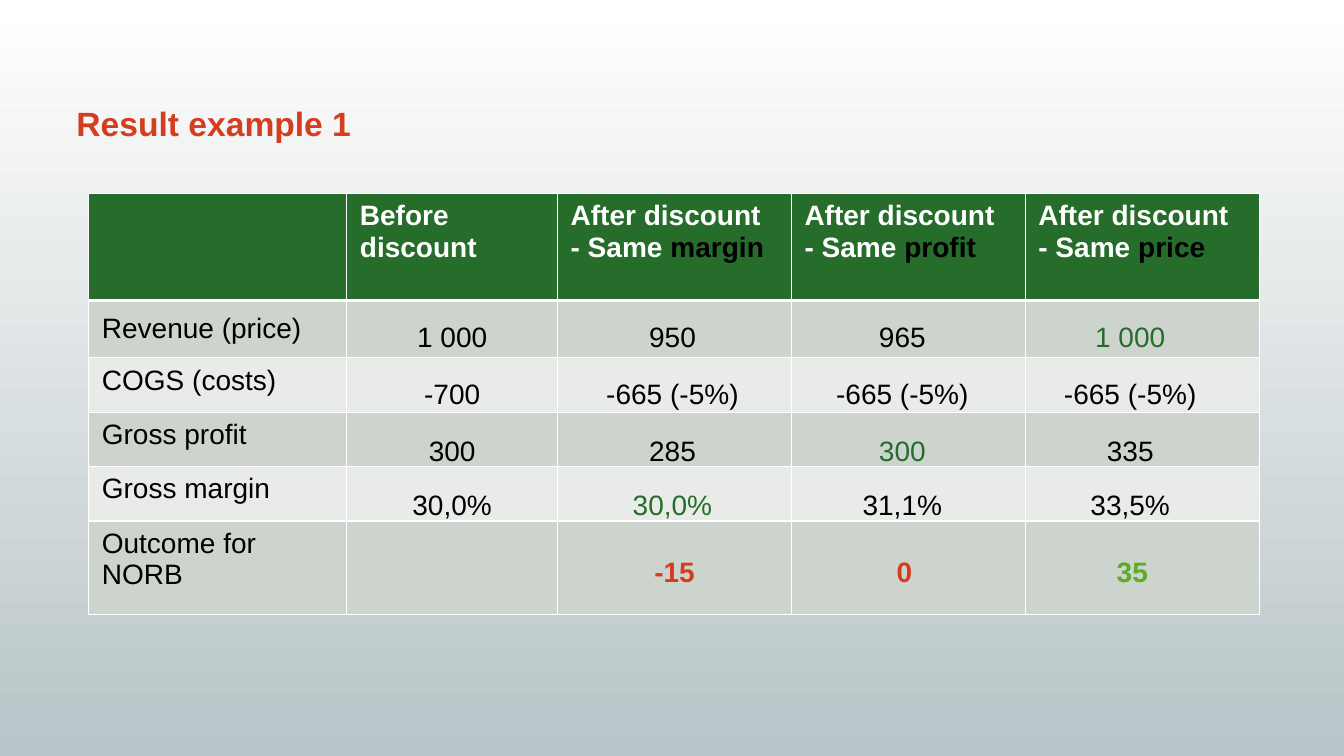
import lxml.etree
import pptx
import pptx.dml.color
import pptx.enum.shapes
import pptx.enum.text
import pptx.oxml.ns
import pptx.util
from dataclasses import dataclass
from pptx.util import Inches

TITLE = "Result example 1"
HEADERS = [
    [],
    [[("Before discount", "white")]],
    [[("After discount", "white")], [("- Same ", "white"), ("margin", "black")]],
    [[("After discount", "white")], [("- Same ", "white"), ("profit", "black")]],
    [[("After discount", "white")], [("- Same ", "white"), ("price", "black")]],
]
ROW_LABELS = ["Revenue (price)", "COGS (costs)", "Gross profit", "Gross margin", "Outcome for NORB"]
SCENARIOS = [
    ["1 000", "-700", "300", "30,0%"],
    ["950", "-665 (-5%)", "285", "30,0%", "-15"],
    ["965", "-665 (-5%)", "300", "31,1%", "0"],
    ["1 000", "-665 (-5%)", "335", "33,5%", "35"],
]
HIGHLIGHTS = {(1, 3): "green", (2, 2): "green", (3, 0): "green",
              (1, 4): "red", (2, 4): "red", (3, 4): "lime"}

COLUMN_WIDTHS = [2.56, 2.09, 2.32, 2.32, 2.32]
ROW_HEIGHTS = [1.06, 0.57, 0.54, 0.54, 0.54, 0.93]
VALUE_COLUMNS = [(3.43, 2.11), (5.53, 2.28), (7.81, 2.28), (10.07, 2.28)]
VALUE_TOPS = [3.12, 3.69, 4.25, 4.79, 5.45]
OUTCOME_ROW = 4
OUTCOME_SHIFT = 0.02


@dataclass
class Theme:
    font = "Arial"
    title_size = 24
    body_size = 20
    white = "FFFFFF"
    black = "000000"
    red = "D53D20"
    green = "266D2B"
    lime = "5BAC26"
    band_dark = "CDD4CD"
    band_light = "E8EBE8"
    backdrop = "B9C5C8"


theme = Theme()


def color(name):
    return pptx.dml.color.RGBColor.from_string(getattr(theme, name))


def style(para, size, bold=False, tint=None):
    para.font.name = theme.font
    para.font.size = pptx.util.Pt(size)
    para.font.bold = bold
    if tint:
        para.font.color.rgb = color(tint)


def add_backdrop(page, deck):
    backdrop = page.shapes.add_shape(pptx.enum.shapes.MSO_SHAPE.RECTANGLE, 0, 0,
                                     deck.slide_width, deck.slide_height)
    backdrop.shadow.inherit = False
    backdrop.line.fill.background()
    backdrop.fill.gradient()
    backdrop.fill.gradient_angle = 90
    for stop, position, name in zip(backdrop.fill.gradient_stops, (0, 1), ("backdrop", "white")):
        stop.position = position
        stop.color.rgb = color(name)


def add_text(page, text, area, size, tint, bold=False, align=None):
    box = page.shapes.add_textbox(*map(Inches, area))
    box.text_frame.word_wrap = True
    para = box.text_frame.paragraphs[0]
    para.text = text
    para.alignment = align
    style(para, size, bold, tint)
    return box


def finish_cell(cell, fill, bottom_width):
    cell.margin_left = cell.margin_right = Inches(0.13)
    cell.margin_top = cell.margin_bottom = Inches(0.07)
    properties = cell._tc.get_or_add_tcPr()
    for side, width in (("L", 1), ("R", 1), ("T", 1), ("B", bottom_width)):
        line = lxml.etree.SubElement(properties, pptx.oxml.ns.qn(f"a:ln{side}"),
                                     w=str(pptx.util.Pt(width)))
        solid = lxml.etree.SubElement(line, pptx.oxml.ns.qn("a:solidFill"))
        lxml.etree.SubElement(solid, pptx.oxml.ns.qn("a:srgbClr"), val=theme.white)
    cell.fill.solid()
    cell.fill.fore_color.rgb = color(fill)


def add_result_table(page):
    area = (0.88, 1.92, sum(COLUMN_WIDTHS), sum(ROW_HEIGHTS))
    table = page.shapes.add_table(len(ROW_HEIGHTS), len(COLUMN_WIDTHS), *map(Inches, area)).table
    table.first_row = table.horz_banding = False
    for column, width in zip(table.columns, COLUMN_WIDTHS):
        column.width = Inches(width)
    for index, (row, height) in enumerate(zip(table.rows, ROW_HEIGHTS)):
        row.height = Inches(height)
        fill = "green" if index == 0 else ("band_light", "band_dark")[index % 2]
        for cell in row.cells:
            finish_cell(cell, fill, 3 if index == 0 else 1)
    for column, lines in enumerate(HEADERS):
        frame = table.cell(0, column).text_frame
        for index, line in enumerate(lines):
            para = frame.add_paragraph() if index else frame.paragraphs[0]
            style(para, theme.body_size, bold=True)
            for text, tint in line:
                span = para.add_run()
                span.text = text
                span.font.color.rgb = color(tint)
    for row, label in enumerate(ROW_LABELS, start=1):
        para = table.cell(row, 0).text_frame.paragraphs[0]
        para.text = label
        style(para, theme.body_size, tint="black")
    table.cell(1, 0).vertical_anchor = pptx.enum.text.MSO_ANCHOR.MIDDLE


def add_values(page):
    for column, ((left, width), values) in enumerate(zip(VALUE_COLUMNS, SCENARIOS)):
        for row, (top, value) in enumerate(zip(VALUE_TOPS, values)):
            outcome = row == OUTCOME_ROW
            area = (left + OUTCOME_SHIFT * outcome, top, width, 0.44)
            add_text(page, value, area, theme.body_size, HIGHLIGHTS.get((column, row), "black"),
                     outcome, pptx.enum.text.PP_ALIGN.CENTER)


def main():
    deck = pptx.Presentation()
    deck.slide_width, deck.slide_height = Inches(13.33), Inches(7.5)
    page = deck.slides.add_slide(deck.slide_layouts[6])
    add_backdrop(page, deck)
    title = add_text(page, TITLE, (0.66, 0.94, 12.02, 0.91), theme.title_size, "red", True)
    title.text_frame.margin_top = Inches(0.08)
    add_result_table(page)
    add_values(page)
    deck.save("out.pptx")


if __name__ == "__main__":
    main()
